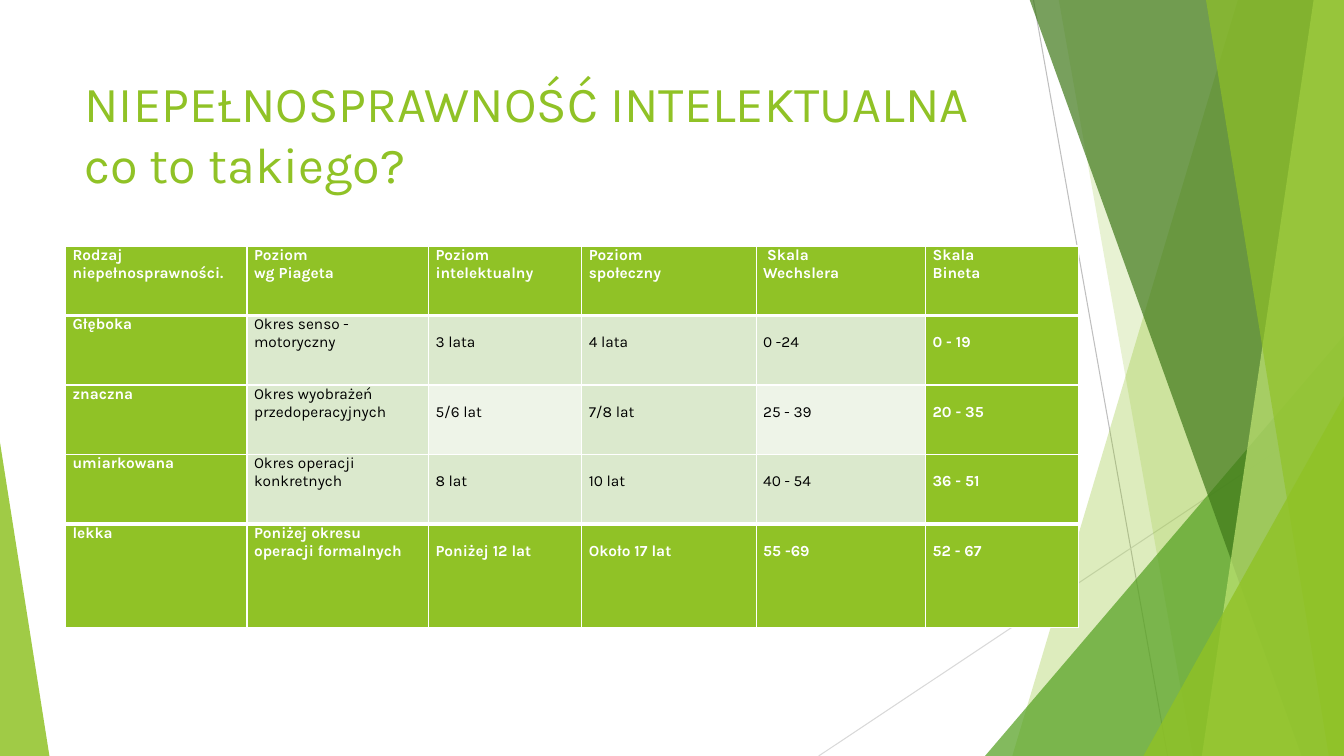
from dataclasses import dataclass

from lxml import etree
from pptx import Presentation
from pptx import util as u
from pptx.dml.color import RGBColor
from pptx.enum import shapes, text
from pptx.oxml.ns import qn


@dataclass(frozen=True)
class Theme:
    font: str = "Karla"
    title_size: int = 36
    table_size: int = 11
    green: str = "90C226"
    mid_green: str = "54A021"
    dark_green: str = "3F7819"
    lime: str = "C0E474"
    pale: str = "DBE9CD"
    paler: str = "EEF4E8"
    white: str = "FFFFFF"
    black: str = "000000"
    line_dark: str = "BFBFBF"
    line_light: str = "D9D9D9"


theme = Theme()


def style_runs(frame, size, color, bold=False):
    for paragraph in frame.paragraphs:
        for run in paragraph.runs:
            run.font.name = theme.font
            run.font.size = u.Pt(size)
            run.font.bold = bold
            run.font.color.rgb = RGBColor.from_string(color)


def set_border(cell, side, width):
    line = etree.SubElement(cell._tc.get_or_add_tcPr(), qn(f"a:{side}"), w=str(u.Pt(width)))
    fill = etree.SubElement(line, qn("a:solidFill"))
    etree.SubElement(fill, qn("a:srgbClr"), val=theme.white)


prs = Presentation()
prs.slide_width, prs.slide_height = u.Inches(13.33), u.Inches(7.5)
slide = prs.slides.add_slide(prs.slide_layouts[6])

# Thin lines behind the facets
for x1, y1, x2, y2, color in (
    (10.25, 0, 11.58, 7.5, theme.line_dark),
    (13.33, 4.03, 8.12, 7.5, theme.line_light),
):
    ray = slide.shapes.add_connector(
        shapes.MSO_CONNECTOR.STRAIGHT, *(u.Inches(v) for v in (x1, y1, x2, y2)))
    ray.line.color.rgb = RGBColor.from_string(color)
    ray.line.width = u.Pt(0.75)
    etree.SubElement(ray._element.spPr, qn("a:effectLst"))

# Translucent facets, back to front: bands have a top-left and bottom-left x
# and reach the right edge; triangles have a box and an apex position
facets = (
    ("band", (12.28, 10.04), theme.green, 30),
    ("band", (10.5, 11.83), theme.green, 20),
    ("triangle", (9.77, 3.33, 3.56, 4.17, 1), theme.mid_green, 72),
    ("band", (10.21, 12.91), theme.dark_green, 70),
    ("band", (13.03, 11.92), theme.lime, 70),
    ("band", (11.96, 13.18), theme.green, 65),
    ("triangle", (11.34, 3.93, 1.99, 3.57, 1), theme.green, 80),
    ("triangle", (0, 4.39, 0.49, 3.11, 0), theme.green, 85),
)
for kind, geometry, color, opacity in facets:
    if kind == "band":
        top_x, bottom_x = geometry
        corners = [(u.Inches(x), u.Inches(y)) for x, y in (
            (top_x, -0.01), (13.33, -0.01), (13.33, 7.5), (bottom_x, 7.5))]
        outline = slide.shapes.build_freeform(*corners[0])
        outline.add_line_segments(corners[1:], close=True)
        facet = outline.convert_to_shape()
    else:
        *box, apex = geometry
        facet = slide.shapes.add_shape(
            shapes.MSO_SHAPE.ISOSCELES_TRIANGLE, *(u.Inches(v) for v in box))
        facet.adjustments[0] = apex
    facet.shadow.inherit = False
    facet.line.fill.background()
    facet.fill.solid()
    facet.fill.fore_color.rgb = RGBColor.from_string(color)
    tint = facet._element.spPr.find(qn("a:solidFill"))[0]
    etree.SubElement(tint, qn("a:alpha"), val=str(opacity * 1000))

# Title
title = slide.shapes.add_textbox(
    u.Inches(0.74), u.Inches(0.67), u.Inches(9.4), u.Inches(1.44)).text_frame
title.word_wrap = True
title.vertical_anchor = text.MSO_ANCHOR.TOP
title.text = "NIEPEŁNOSPRAWNOŚĆ INTELEKTUALNA\vco to takiego?"
style_runs(title, theme.title_size, theme.green)

# Table of disability levels
levels = (
    ("Rodzaj niepełnosprawności.", "Poziom\nwg Piageta", "Poziom intelektualny",
     "Poziom\nspołeczny", " Skala\nWechslera", "Skala\nBineta"),
    ("Głęboka", "Okres senso - motoryczny", "3 lata", "4 lata", "0 -24", "0 - 19"),
    ("znaczna", "Okres wyobrażeń przedoperacyjnych", "5/6 lat", "7/8 lat",
     "25 - 39", "20 - 35"),
    ("umiarkowana", "Okres operacji konkretnych", "8 lat", "10 lat", "40 - 54", "36 - 51"),
    ("lekka", "Poniżej okresu operacji formalnych", "Poniżej 12 lat", "Około 17 lat",
     "55 -69", "52 - 67"),
)
column_widths = (1.8, 1.8, 1.52, 1.73, 1.68, 1.52)
row_heights = (0.69, 0.69, 0.69, 0.69, 1.03)
last_row, last_col = len(row_heights) - 1, len(column_widths) - 1
lighter_cells = {(2, 2), (2, 4)}

table = slide.shapes.add_table(
    len(row_heights), len(column_widths), u.Inches(0.65), u.Inches(2.44),
    u.Inches(sum(column_widths)), u.Inches(sum(row_heights))).table
for column, width in zip(table.columns, column_widths):
    column.width = u.Inches(width)
for row, height in zip(table.rows, row_heights):
    row.height = u.Inches(height)

for r, level in enumerate(levels):
    for c, entry in enumerate(level):
        cell = table.cell(r, c)
        strong = r in (0, last_row) or c in (0, last_col)
        cell.margin_left = cell.margin_right = u.Inches(0.07)
        # Values below the header sit one line lower
        cell.margin_top = u.Inches(0.18 if r > 0 and c > 1 else 0)
        cell.margin_bottom = 0
        cell.vertical_anchor = text.MSO_ANCHOR.TOP
        cell.text_frame.text = entry
        style_runs(cell.text_frame, theme.table_size,
                   theme.white if strong else theme.black, strong)
        # Thick rules under the header and above the last row
        set_border(cell, "lnL", 1)
        set_border(cell, "lnR", 1)
        set_border(cell, "lnT", 3 if r in (1, last_row) else 1)
        set_border(cell, "lnB", 3 if r in (0, last_row - 1) else 1)
        shade = theme.paler if (r, c) in lighter_cells else theme.pale
        cell.fill.solid()
        cell.fill.fore_color.rgb = RGBColor.from_string(theme.green if strong else shade)

prs.save("out.pptx")
